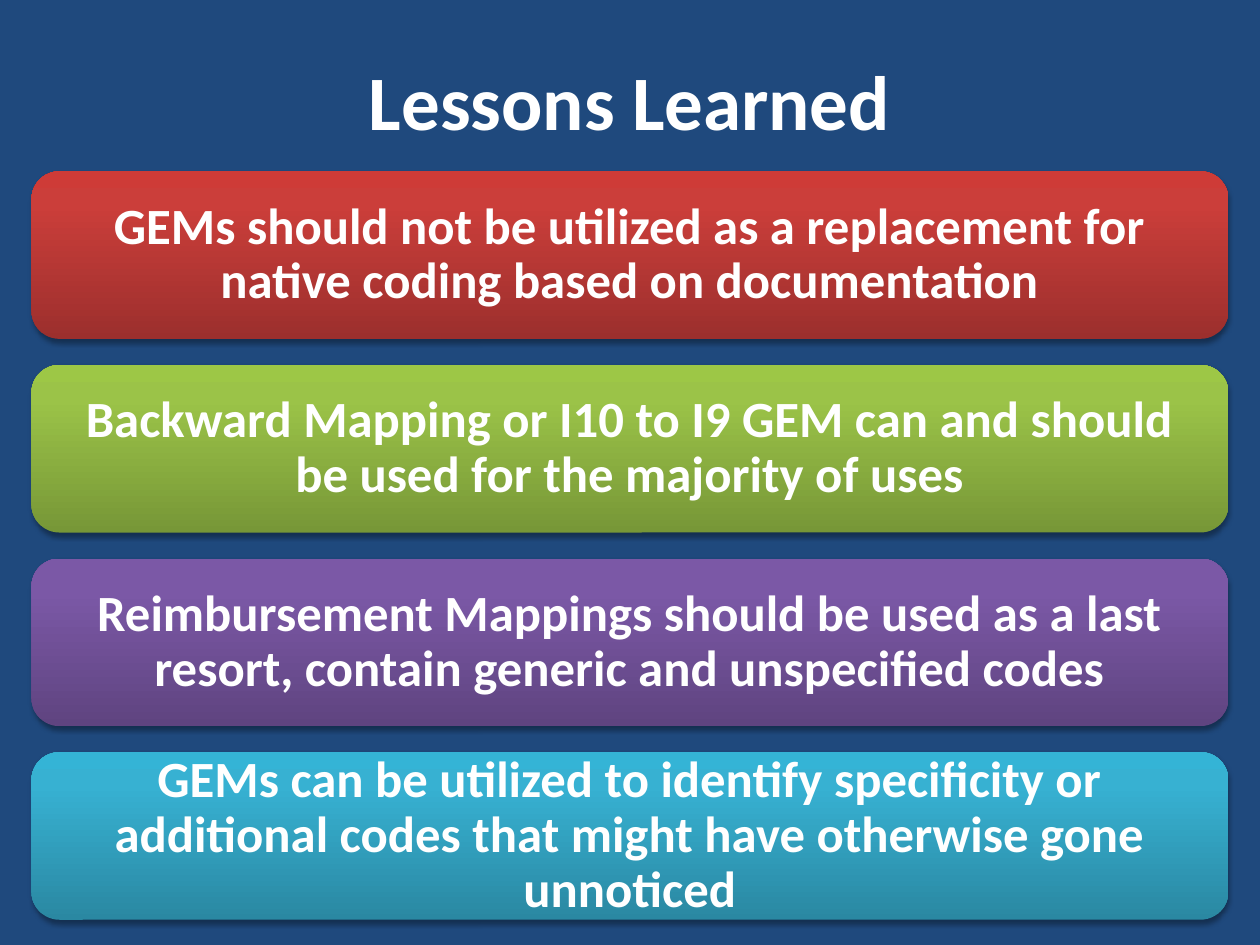
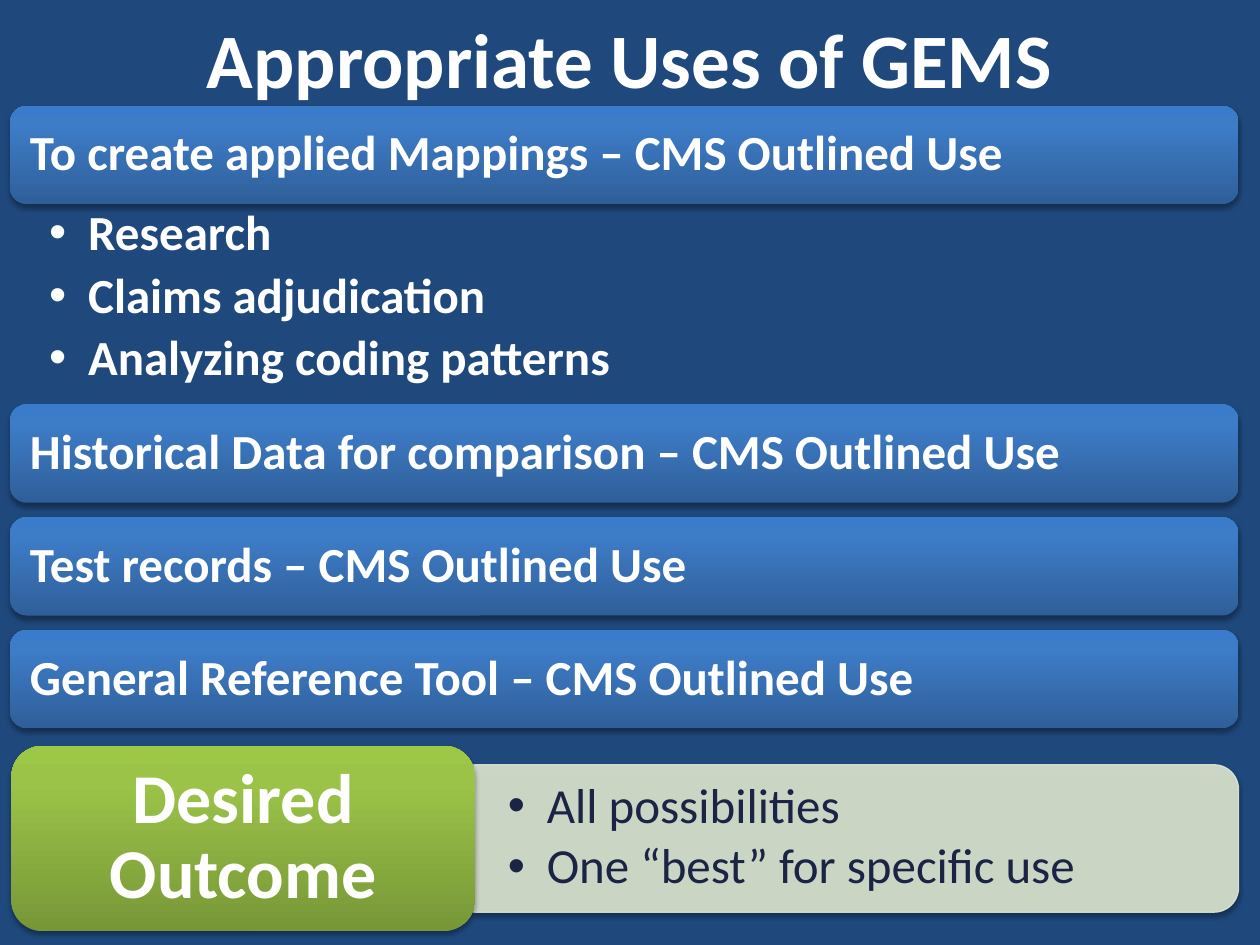
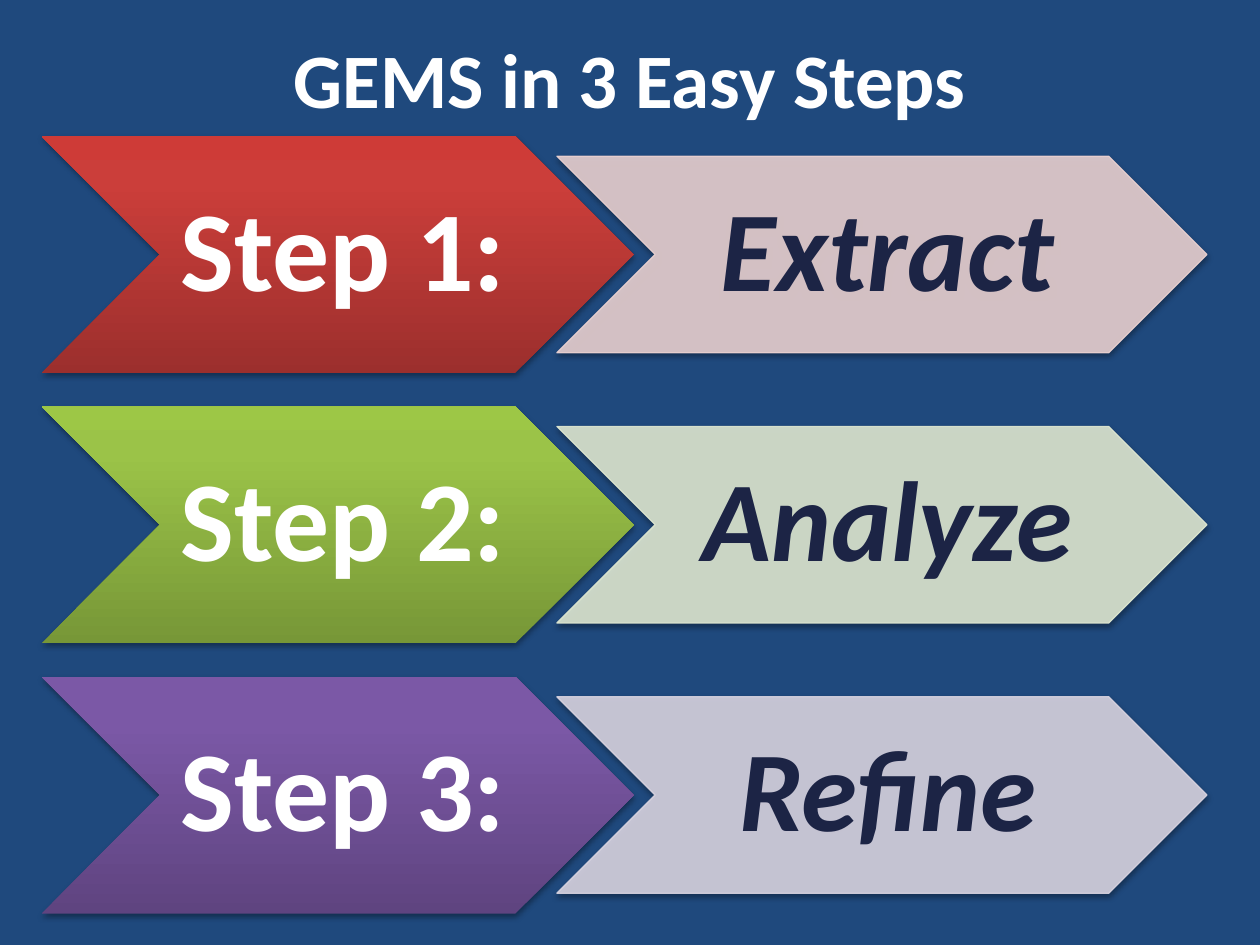
from dataclasses import dataclass
from lxml.etree import SubElement
from pptx import Presentation
from pptx.dml.color import RGBColor
from pptx.enum.shapes import MSO_SHAPE
from pptx.enum.text import MSO_ANCHOR, MSO_AUTO_SIZE, PP_ALIGN
from pptx.oxml.ns import qn
from pptx.util import Inches, Pt

LESSONS = [
    ("red", "GEMs should not be utilized as a replacement for native coding based on documentation"),
    ("green", "Backward Mapping or I10 to I9 GEM can and should be used for the majority of uses"),
    ("purple", "Reimbursement Mappings should be used as a last resort, contain generic and unspecified codes"),
    ("teal", "GEMs can be utilized to identify specificity or additional codes that might have otherwise gone unnoticed"),
]
FIRST_USE = "To create applied Mappings – CMS Outlined Use"
FIRST_LIST = ["Research", "Claims adjudication", "Analyzing coding patterns"]
MORE_USES = [
    "Historical Data for comparison – CMS Outlined Use",
    "Test records – CMS Outlined Use",
    "General Reference Tool – CMS Outlined Use",
]
OUTCOME = "Desired Outcome"
OUTCOME_LIST = ["All possibilities", "One “best” for specific use"]
STEPS = [("red", "Step 1:", "Extract"), ("green", "Step 2:", "Analyze"),
         ("purple", "Step 3:", "Refine")]


@dataclass(frozen=True)
class Theme:
    font: str = "Calibri"
    back: str = "1F497D"
    light: str = "FFFFFF"
    ink: str = "1C2445"
    title: int = 44
    lesson: int = 29
    use: int = 28
    outcome: int = 40
    step: int = 65


THEME = Theme()
# Gradient stops from the bottom edge to the top edge
GRADS = {
    "red": ("9C2F2D", "CB3E3A", "CE3B37"),
    "green": ("779737", "9BC348", "9DC746"),
    "purple": ("5F4480", "7B58A6", "7C57A8"),
    "teal": ("2A88A2", "37B1D2", "34B4D6"),
    "blue": ("2F5F99", "3D7CC7", "3A7CCB"),
}
PALES = {"red": "E8D0D0", "green": "DEE7D1", "purple": "D8D3E0"}


def node(parent, tag, **attrs):
    return SubElement(parent, qn(tag), {k: str(v) for k, v in attrs.items()})


def place(shape, box):
    shape.left, shape.top, shape.width, shape.height = map(Inches, box)


def spread(first, last, count):
    """Return evenly spaced positions from first to last."""
    return [first + (last - first) * i / (count - 1) for i in range(count)]


def write(shape, lines, size, color=THEME.light, bold=True, italic=False,
          align=PP_ALIGN.CENTER, anchor=MSO_ANCHOR.MIDDLE,
          inset=(0.1, 0.05, 0.1, 0.05), spacing=0.9, after=0, bullet=False):
    frame = shape.text_frame
    frame.word_wrap = True
    frame.auto_size = MSO_AUTO_SIZE.NONE
    frame.vertical_anchor = anchor
    (frame.margin_left, frame.margin_top,
     frame.margin_right, frame.margin_bottom) = map(Inches, inset)
    for i, line in enumerate(lines):
        para = frame.paragraphs[0] if i == 0 else frame.add_paragraph()
        para.alignment = align
        para.line_spacing = spacing
        para.space_before = Pt(0)
        para.space_after = Pt(after)
        if bullet:
            props = para._p.get_or_add_pPr()
            props.set("marL", str(Inches(0.31)))
            props.set("indent", str(-Inches(0.31)))
            node(props, "a:buChar", char="•")
        run = para.add_run()
        run.text = line
        font = run.font
        font.name, font.size = THEME.font, Pt(size)
        font.bold, font.italic = bold, italic
        font.color.rgb = RGBColor.from_string(color)


def block(slide, kind, box):
    """Add a preset shape with the deck's soft shadow below it."""
    shape = slide.shapes.add_shape(kind, *map(Inches, box))
    shape.shadow.inherit = False
    effects = shape._element.spPr.find(qn("a:effectLst"))
    shade = node(effects, "a:outerShdw", blurRad=Pt(3.1), dist=Pt(1.8),
                 dir=5400000, rotWithShape=0)
    node(node(shade, "a:srgbClr", val="000000"), "a:alpha", val=35000)
    return shape


def vivid(slide, kind, box, tone):
    shape = block(slide, kind, box)
    shape.fill.gradient()
    grad = shape._element.spPr.find(qn("a:gradFill"))
    for child in list(grad):
        grad.remove(child)
    stops = node(grad, "a:gsLst")
    for share, color in zip((0, 80, 100), GRADS[tone]):
        node(node(stops, "a:gs", pos=share * 1000), "a:srgbClr", val=color)
    node(grad, "a:lin", ang=270 * 60000, scaled=0)
    shape.line.fill.background()
    return shape


def pale(slide, kind, box, tone):
    shape = block(slide, kind, box)
    shape.line.width = Pt(0.75)
    for fill in (shape.fill, shape.line.fill):
        fill.solid()
        fill.fore_color.rgb = RGBColor.from_string(PALES[tone])
    for color in shape._element.spPr.iter(qn("a:srgbClr")):
        if color.get("val") == PALES[tone]:
            node(color, "a:alpha", val=90000)
    return shape


def start(deck, layout, title, box):
    slide = deck.slides.add_slide(deck.slide_layouts.get_by_name(layout))
    place(slide.shapes.title, box)
    write(slide.shapes.title, [title], THEME.title, spacing=1)
    return slide


def lessons(deck):
    slide = start(deck, "Title Only", "Lessons Learned", (0.5, 0.17, 9, 1.25))
    for top, (tone, text) in zip(spread(1.36, 5.97, len(LESSONS)), LESSONS):
        tile = vivid(slide, MSO_SHAPE.ROUNDED_RECTANGLE, (0.25, top, 9.5, 1.33), tone)
        write(tile, [text], THEME.lesson, inset=[0.12] * 4)


def uses(deck):
    slide = start(deck, "Two Content", "Appropriate Uses of GEMS", (0.5, 0, 9, 0.91))
    tops = [0.84] + spread(3.21, 5, len(MORE_USES))
    for top, text in zip(tops, [FIRST_USE] + MORE_USES):
        bar = vivid(slide, MSO_SHAPE.ROUNDED_RECTANGLE, (0.08, top, 9.75, 0.78), "blue")
        write(bar, [text], THEME.use, align=PP_ALIGN.LEFT, inset=[0.12] * 4)

    first, second = list(slide.placeholders)[1:]
    place(first, (0.08, 1.61, 9.75, 1.59))
    write(first, FIRST_LIST, THEME.use, align=PP_ALIGN.LEFT, anchor=MSO_ANCHOR.TOP,
          inset=(0.31, 0.04, 0.22, 0.04), after=5.6, bullet=True)

    # The panel is drawn upright, then turned about its centre
    panel = pale(slide, MSO_SHAPE.ROUND_2_SAME_RECTANGLE, (6.21, 3.62, 1.17, 6.07), "green")
    panel.rotation = 90
    slide.shapes._spTree.insert(2, panel._element)
    place(second, (3.76, 6.12, 6.01, 1.06))
    write(second, OUTCOME_LIST, THEME.use, color=THEME.ink, bold=False,
          align=PP_ALIGN.LEFT, inset=(0.27, 0.14, 0.27, 0.14), after=4.2, bullet=True)
    badge = vivid(slide, MSO_SHAPE.ROUNDED_RECTANGLE, (0.09, 5.92, 3.68, 1.47), "green")
    write(badge, [OUTCOME], THEME.outcome, inset=(0.17, 0.08, 0.17, 0.08))


def steps(deck):
    slide = start(deck, "Title Only", "GEMS in 3 Easy Steps", (0, 0, 10, 1.23))
    tall, low = 1.88, 1.56
    inset = (0.09, 0.05, 0, 0.05)
    for top, (tone, label, action) in zip(spread(1.08, 5.37, len(STEPS)), STEPS):
        arrow = vivid(slide, MSO_SHAPE.CHEVRON, (0.33, top, 4.7, tall), tone)
        write(arrow, [label], THEME.step, inset=inset)
        box = (4.42, top + (tall - low) / 2, 5.16, low)
        write(pale(slide, MSO_SHAPE.CHEVRON, box, tone), [action], THEME.step,
              color=THEME.ink, italic=True, inset=inset)


def main():
    deck = Presentation()
    deck.slide_width, deck.slide_height = Inches(10), Inches(7.5)
    back = deck.slide_master.background.fill
    back.solid()
    back.fore_color.rgb = RGBColor.from_string(THEME.back)
    for build in (lessons, uses, steps):
        build(deck)
    deck.save("out.pptx")


if __name__ == "__main__":
    main()
